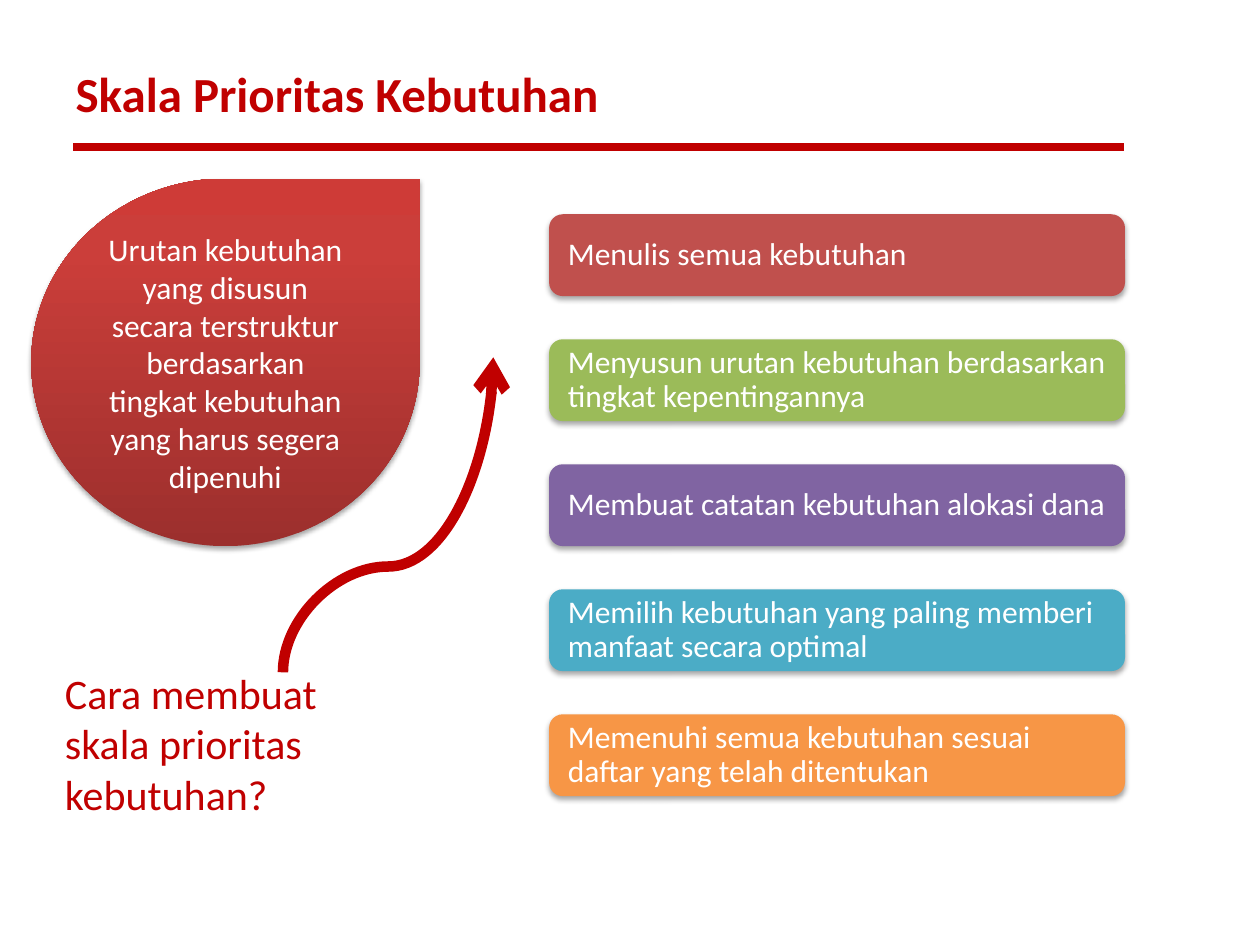
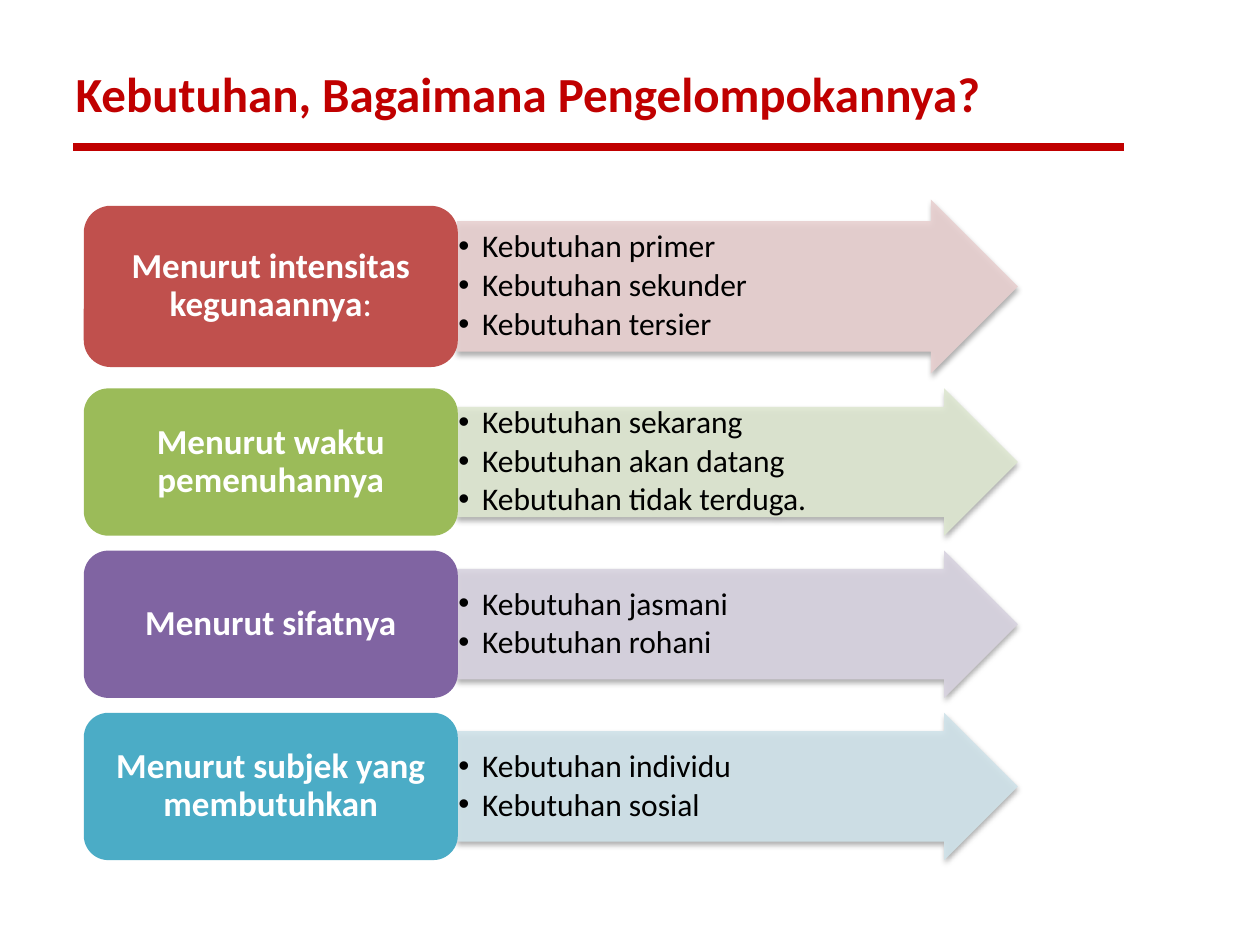
from dataclasses import dataclass

from lxml import etree
from pptx import Presentation
from pptx.dml.color import RGBColor
from pptx.enum.shapes import MSO_CONNECTOR, MSO_SHAPE
from pptx.enum.text import MSO_ANCHOR, MSO_AUTO_SIZE, PP_ALIGN
from pptx.oxml.ns import qn
from pptx.util import Cm, Pt

STRAIGHT, CURVE = MSO_CONNECTOR.STRAIGHT, MSO_CONNECTOR.CURVE
ROUNDED, TEAR, ARROW = (MSO_SHAPE.ROUNDED_RECTANGLE, MSO_SHAPE.TEAR,
                        MSO_SHAPE.RIGHT_ARROW)
LEFT, CENTER = PP_ALIGN.LEFT, PP_ALIGN.CENTER
MIDDLE, TOP = MSO_ANCHOR.MIDDLE, MSO_ANCHOR.TOP
NO_FIT = MSO_AUTO_SIZE.NONE
TITLE_ONLY = 5


@dataclass(frozen=True)
class Theme:
    font: str = "Calibri"
    accent: str = "C00000"
    white: str = "FFFFFF"
    black: str = "000000"
    series: tuple = ("C0504D", "9BBB59", "8064A2", "4BACC6", "F79646")
    tints: tuple = ("E8D0D0", "DEE7D1", "D8D3E0", "D0E3EA")
    drop_stops: tuple = ((0, "9C2F2D"), (80, "CB3E3A"), (100, "CE3B37"))
    title: int = 28
    question: int = 24
    label: int = 20
    body: int = 18


THEME = Theme()

STEPS = (
    "Menulis semua kebutuhan",
    "Menyusun urutan kebutuhan berdasarkan tingkat kepentingannya",
    "Membuat catatan kebutuhan alokasi dana",
    "Memilih kebutuhan yang paling memberi manfaat secara optimal",
    "Memenuhi semua kebutuhan sesuai daftar yang telah ditentukan",
)

# Label, its lighter ending, needs, arrow height, label card height (cm)
GROUPS = (
    ("Menurut intensitas kegunaannya", ":",
     ("Kebutuhan primer", "Kebutuhan sekunder", "Kebutuhan tersier"), 3.51, 3.25),
    ("Menurut waktu pemenuhannya", "",
     ("Kebutuhan sekarang", "Kebutuhan akan datang",
      "Kebutuhan tidak terduga."), 2.97, 2.97),
    ("Menurut sifatnya", "",
     ("Kebutuhan jasmani", "Kebutuhan rohani"), 2.97, 2.97),
    ("Menurut subjek yang membutuhkan", "",
     ("Kebutuhan individu", "Kebutuhan sosial"), 2.97, 2.97),
)


# Text helpers
def style_span(span, size, color, bold=False):
    span.font.name = THEME.font
    span.font.size = Pt(size)
    span.font.bold = bold
    span.font.color.rgb = RGBColor.from_string(color)


def write(box, text, size, color, bold=False, align=LEFT, anchor=MIDDLE,
          spacing=None, insets=None):
    """Fill a box with text, one paragraph per line; insets are (x, y) in cm."""
    frame = box.text_frame
    frame.text = text
    frame.word_wrap = True
    frame.auto_size = NO_FIT
    frame.vertical_anchor = anchor
    if insets:
        frame.margin_left = frame.margin_right = Cm(insets[0])
        frame.margin_top = frame.margin_bottom = Cm(insets[1])
    for para in frame.paragraphs:
        para.alignment = align
        if spacing:
            para.line_spacing = spacing
        for span in para.runs:
            style_span(span, size, color, bold)
    return frame


def add_bullet(para):
    properties = para._p.get_or_add_pPr()
    properties.set("marL", str(Cm(0.48)))
    properties.set("indent", str(-Cm(0.48)))
    etree.SubElement(properties, qn("a:buFont"), typeface="Arial")
    etree.SubElement(properties, qn("a:buChar"), char="•")


# Shape helpers
def add_plain_shape(page, kind, left, top, width, height, color):
    shape = page.shapes.add_shape(kind, Cm(left), Cm(top), Cm(width), Cm(height))
    shape.fill.solid()
    shape.fill.fore_color.rgb = RGBColor.from_string(color)
    shape.line.fill.background()
    shape.shadow.inherit = False
    return shape


def add_shadow(shape):
    effects = shape._element.spPr.find(qn("a:effectLst"))
    shadow = etree.SubElement(effects, qn("a:outerShdw"), blurRad=str(Pt(3.1)),
                              dist=str(Pt(1.8)), dir="5400000", rotWithShape="0")
    color = etree.SubElement(shadow, qn("a:srgbClr"), val=THEME.black)
    etree.SubElement(color, qn("a:alpha"), val="35000")


def set_alpha(shape, percent):
    color = shape._element.spPr.find(qn("a:solidFill")).find(qn("a:srgbClr"))
    etree.SubElement(color, qn("a:alpha"), val=str(percent * 1000))


def set_gradient(shape, stops):
    shape.fill.gradient()
    shape.fill.gradient_angle = 90
    stop_list = shape._element.spPr.find(qn("a:gradFill")).find(qn("a:gsLst"))
    for stop in list(stop_list):
        stop_list.remove(stop)
    for position, color in stops:
        stop = etree.SubElement(stop_list, qn("a:gs"), pos=str(position * 1000))
        etree.SubElement(stop, qn("a:srgbClr"), val=color)


def add_line(page, kind, start, end, weight):
    line = page.shapes.add_connector(kind, *(Cm(value) for value in start + end))
    line.line.color.rgb = RGBColor.from_string(THEME.accent)
    line.line.width = Pt(weight)
    etree.SubElement(line._element.spPr, qn("a:effectLst"))
    return line


# Parts of the pages
def add_page(deck, title):
    page = deck.slides.add_slide(deck.slide_layouts[TITLE_ONLY])
    heading = page.shapes.title
    heading.left, heading.top = Cm(1.27), Cm(0.76)
    heading.width, heading.height = Cm(22.86), Cm(2.21)
    write(heading, title, THEME.title, THEME.accent, bold=True)
    add_line(page, STRAIGHT, (1.48, 2.96), (22.66, 2.96), 4.5)
    return page


def add_definition(page, text):
    drop = add_plain_shape(page, TEAR, 0.63, 3.6, 7.83, 7.41, THEME.accent)
    set_gradient(drop, THEME.drop_stops)
    add_shadow(drop)
    write(drop, text, THEME.body, THEME.white, align=CENTER)


def add_step(page, index, text):
    bar = add_plain_shape(page, ROUNDED, 11.07, 4.32 + 2.52 * index,
                          11.61, 1.65, THEME.series[index])
    add_shadow(bar)
    write(bar, text, THEME.body, THEME.white, spacing=0.9, insets=(0.3, 0))


def add_question(page, text):
    box = page.shapes.add_textbox(Cm(1.06), Cm(13.33), Cm(6.14), Cm(3.33))
    write(box, text, THEME.question, THEME.accent, anchor=TOP)


def add_curved_arrow(page):
    """Curve that leaves the question upwards and bends towards the steps."""
    curve = add_line(page, CURVE, (11.0, 12.5), (4.65, 8.26), 6)
    properties = curve._element.spPr
    properties.find(qn("a:xfrm")).set("rot", "5400000")
    guides = properties.find(qn("a:prstGeom")).find(qn("a:avLst"))
    etree.SubElement(guides, qn("a:gd"), name="adj1", fmla="val 33600")
    etree.SubElement(properties.find(qn("a:ln")), qn("a:tailEnd"), type="arrow")


def add_needs_arrow(page, top, height, needs, color):
    arrow = add_plain_shape(page, ARROW, 9.21, top, 11.31, height, color)
    arrow.adjustments[0] = 0.75
    arrow.adjustments[1] = 0.5
    set_alpha(arrow, 90)
    add_shadow(arrow)
    frame = write(arrow, "\n".join(needs), THEME.body, THEME.black,
                  spacing=0.9, insets=(0.03, 0.03))
    for index, para in enumerate(frame.paragraphs):
        add_bullet(para)
        if index:
            para.space_before = Pt(2.7)


def add_label_card(page, top, height, label, ending, color):
    card = add_plain_shape(page, ROUNDED, 1.69, top, 7.54, height, color)
    frame = write(card, label, THEME.label, THEME.white, bold=True,
                  align=CENTER, spacing=0.9, insets=(0.06, 0))
    if ending:
        span = frame.paragraphs[0].add_run()
        span.text = ending
        style_span(span, THEME.label, THEME.white)


# Pages
def build_priority_page(deck):
    page = add_page(deck, "Skala Prioritas Kebutuhan")
    add_definition(page, "Urutan kebutuhan yang disusun secara terstruktur "
                         "berdasarkan tingkat kebutuhan yang harus segera dipenuhi")
    for index, step in enumerate(STEPS):
        add_step(page, index, step)
    add_question(page, "Cara membuat skala prioritas kebutuhan?")
    add_curved_arrow(page)


def build_grouping_page(deck):
    page = add_page(deck, "Kebutuhan, Bagaimana Pengelompokannya?")
    top, gap = 4.02, 0.3
    for group, color, tint in zip(GROUPS, THEME.series, THEME.tints):
        label, ending, needs, arrow_height, card_height = group
        add_needs_arrow(page, top, arrow_height, needs, tint)
        card_top = top + (arrow_height - card_height) / 2
        add_label_card(page, card_top, card_height, label, ending, color)
        top += arrow_height + gap


def main():
    deck = Presentation()
    deck.slide_width, deck.slide_height = Cm(25.4), Cm(19.05)
    build_priority_page(deck)
    build_grouping_page(deck)
    deck.save("out.pptx")


if __name__ == "__main__":
    main()
